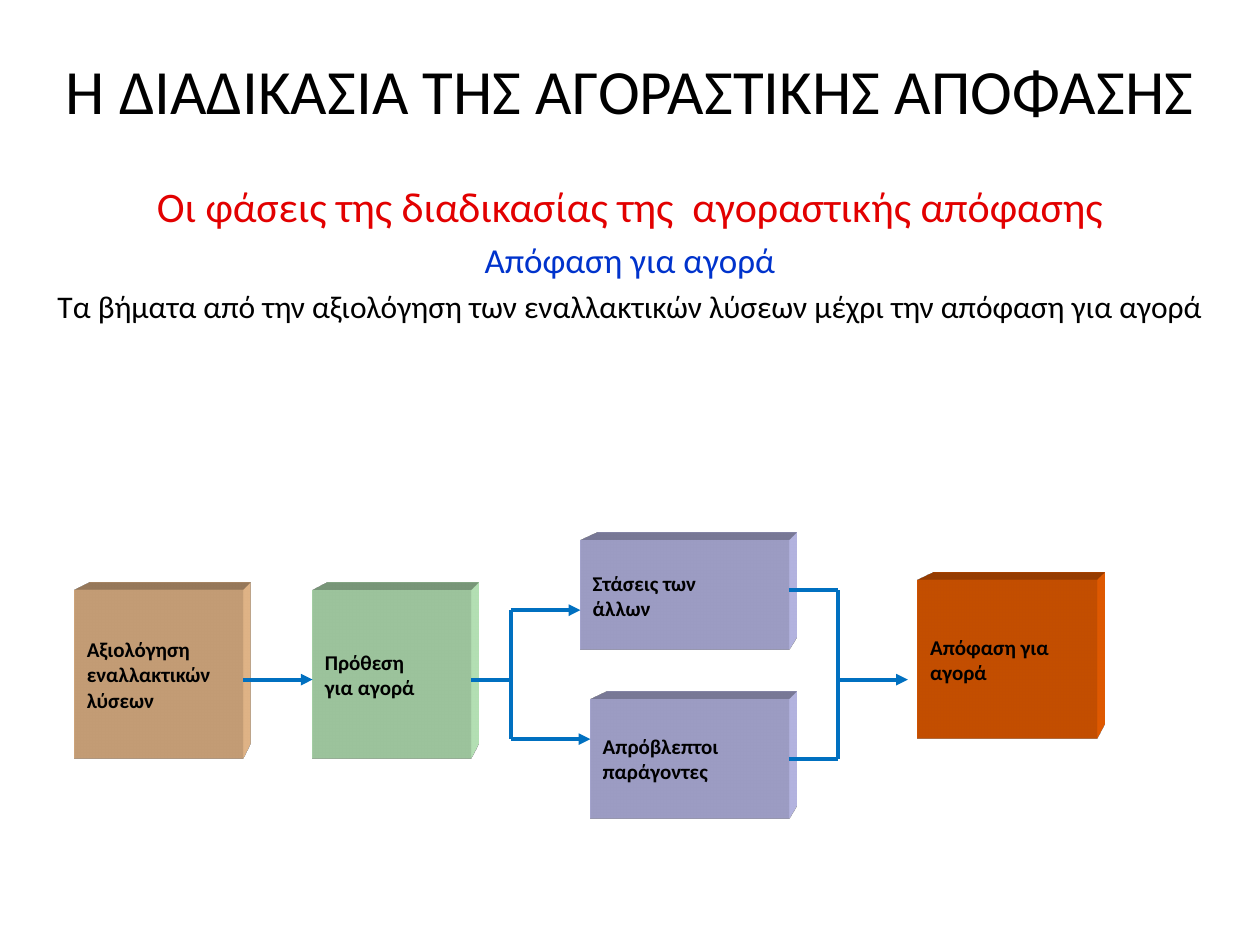
from typing import NamedTuple, Optional

from lxml import etree
from pptx import Presentation
from pptx.dml.color import RGBColor
from pptx.enum.shapes import MSO_CONNECTOR as Connector, MSO_SHAPE as Shape
from pptx.enum.text import MSO_ANCHOR as Anchor, PP_ALIGN as Align
from pptx.oxml import parse_xml
from pptx.oxml.ns import nsdecls, qn
from pptx.util import Inches, Mm, Pt

BLACK = RGBColor(0x00, 0x00, 0x00)
RED = RGBColor(0xE2, 0x00, 0x00)
BLUE = RGBColor(0x00, 0x33, 0xCC)
ARROW_BLUE = RGBColor(0x00, 0x70, 0xC0)
PEACH = RGBColor(0xFF, 0xCC, 0x99)
MINT = RGBColor(0xCC, 0xFF, 0xCC)
LAVENDER = RGBColor(0xCC, 0xCC, 0xFF)
ORANGE = RGBColor(0xFF, 0x66, 0x00)

WIDTH, HEIGHT = Inches(10), Inches(7.5)
CELL = Mm(1)  # the diagram sits on a one-millimetre grid
RIGHT_SIDE = 3


class Line(NamedTuple):
    text: str
    size: int
    color: RGBColor = BLACK
    bold: bool = False


class Step(NamedTuple):
    column: int
    row: int
    columns: int
    rows: int
    fill: RGBColor
    lines: tuple


class Link(NamedTuple):
    start: tuple
    end: tuple
    arrow: bool = False
    source: Optional[int] = None  # step whose right side it leaves


TITLE = [Line("Η ΔΙΑΔΙΚΑΣΙΑ ΤΗΣ ΑΓΟΡΑΣΤΙΚΗΣ ΑΠΟΦΑΣΗΣ", 36)]
SUBTITLE = [
    Line("Οι φάσεις της διαδικασίας της  αγοραστικής απόφασης", 24, RED),
    Line("Απόφαση για αγορά", 20, BLUE),
    Line("Τα βήματα από την αξιολόγηση των εναλλακτικών λύσεων "
         "μέχρι την απόφαση για αγορά", 18),
]
STEPS = [
    Step(15, 119, 34, 34, PEACH, ("Αξιολόγηση", "εναλλακτικών", "λύσεων")),
    Step(63, 119, 32, 34, MINT, ("Πρόθεση", "για αγορά")),
    Step(117, 109, 42, 22, LAVENDER, ("Στάσεις των", "άλλων")),
    Step(119, 141, 40, 24, LAVENDER, ("Απρόβλεπτοι", "παράγοντες")),
    Step(185, 117, 36, 32, ORANGE, ("Απόφαση για", "αγορά")),
]
SPLIT, MERGE, AXIS = 103, 169, 137  # branch columns and main row
LINKS = [
    Link((49, AXIS), (63, AXIS), arrow=True),
    Link((95, AXIS), (SPLIT, AXIS)),
    Link((SPLIT, 123), (SPLIT, 149)),
    Link((SPLIT, 149), (119, 149), arrow=True),
    Link((SPLIT, 123), (117, 123), arrow=True),
    Link((159, 119), (MERGE, 119)),
    Link((159, 153), (MERGE, 153), source=3),
    Link((MERGE, 119), (MERGE, 153)),
    Link((MERGE, AXIS), (183, AXIS), arrow=True),
]


def write_lines(frame, lines: list, align, gap: float = 0) -> None:
    for index, line in enumerate(lines):
        para = frame.paragraphs[0] if index == 0 else frame.add_paragraph()
        para.alignment = align
        if index and gap:
            para.space_before = Pt(gap * line.size)
        span = para.add_run()
        span.text = line.text
        span.font.color.rgb = line.color
        look = {"name": "Calibri", "size": Pt(line.size), "bold": line.bold}
        for name, value in look.items():
            setattr(span.font, name, value)


def add_heading(page, top: float, height: float, lines: list, **layout) -> None:
    box = page.shapes.add_textbox(0, int(HEIGHT * top), WIDTH, int(HEIGHT * height))
    for name, value in {"word_wrap": True, **layout}.items():
        setattr(box.text_frame, name, value)
    write_lines(box.text_frame, lines, Align.CENTER, gap=0.2)


def extrude(box, color: RGBColor) -> None:
    """Give the box depth towards the top right."""
    properties = box._element.spPr
    properties.append(parse_xml(
        f'<a:scene3d {nsdecls("a")}><a:camera prst="legacyPerspectiveTopRight"/>'
        '<a:lightRig rig="legacyFlat3" dir="b"/></a:scene3d>'))
    properties.append(parse_xml(
        f'<a:sp3d {nsdecls("a")} extrusionH="430200" prstMaterial="legacyMatte">'
        '<a:bevelT w="13500" h="13500" prst="angle"/>'
        '<a:bevelB w="13500" h="13500" prst="angle"/>'
        f'<a:extrusionClr><a:srgbClr val="{color}"/></a:extrusionClr></a:sp3d>'))


def add_step(page, step: Step):
    box = page.shapes.add_shape(
        Shape.RECTANGLE, *(CELL * cells for cells in step[:4]))
    box.shadow.inherit = False
    box.fill.solid()
    box.fill.fore_color.rgb = step.fill
    box.line.fill.background()
    extrude(box, step.fill)
    frame = box.text_frame
    frame.word_wrap = False
    frame.vertical_anchor = Anchor.MIDDLE
    write_lines(frame, [Line(text, 12, bold=True) for text in step.lines], Align.LEFT)
    return box


def add_link(page, link: Link, boxes: list) -> None:
    line = page.shapes.add_connector(
        Connector.STRAIGHT, *(CELL * cells for cells in link.start + link.end))
    if link.source is not None:
        line.begin_connect(boxes[link.source], RIGHT_SIDE)
    line.line.color.rgb = ARROW_BLUE
    line.line.width = Pt(2.25)
    if link.arrow:
        etree.SubElement(line.line._get_or_add_ln(), qn("a:tailEnd"), type="triangle")
    etree.SubElement(line._element.spPr, qn("a:effectLst"))


def main() -> None:
    deck = Presentation()
    deck.slide_width, deck.slide_height = WIDTH, HEIGHT
    page = deck.slides.add_slide(deck.slide_layouts[6])

    # Headings
    add_heading(page, 0, 0.27, TITLE,
                vertical_anchor=Anchor.MIDDLE, margin_bottom=Inches(0.66))
    add_heading(page, 0.185, 0.815, SUBTITLE)

    # Decision process
    boxes = [add_step(page, step) for step in STEPS]
    for link in LINKS:
        add_link(page, link, boxes)

    deck.save("out.pptx")


if __name__ == "__main__":
    main()
